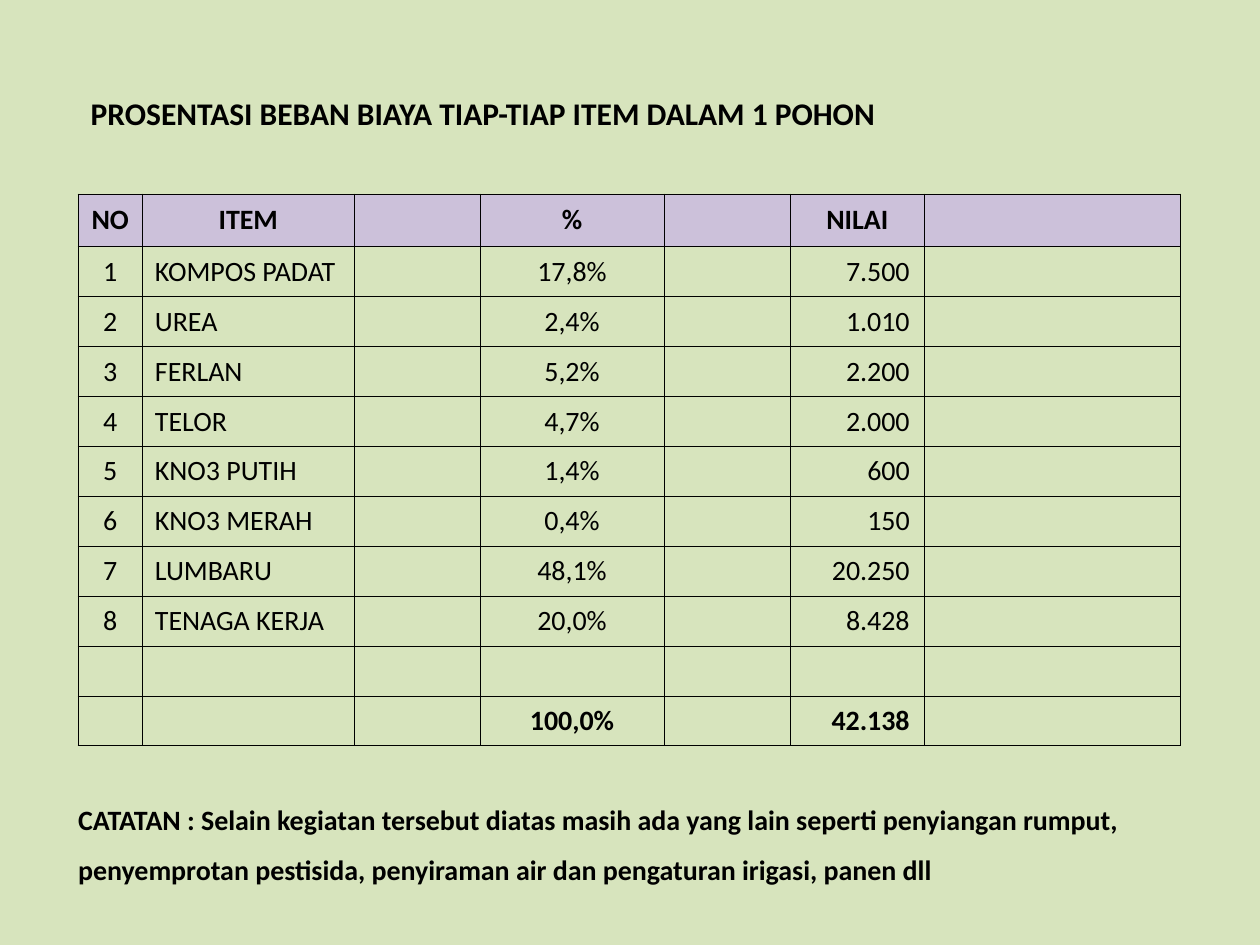
"""Build the slide with the cost share of each item per tree."""
from lxml import etree
from pptx import Presentation
from pptx import util as u
from pptx.dml.color import RGBColor
from pptx.enum import text
from pptx.oxml import ns

COLORS = {"background": "D7E4BD", "header": "CCC1DA", "ink": "000000"}
NO_STYLE = "{2D5ABB26-0587-4C30-8999-92F81FD0307C}"
COLUMN_WIDTHS = [0.51, 1.68, 1, 1.46, 1, 1.07, 2.03]
HEADING_HEIGHT = 0.42
BODY_HEIGHT = 5.15 / 13
HEADER_ROW, TOTAL_ROW, ROW_COUNT = 2, 12, 16
ITEMS = [
    ("KOMPOS PADAT", "17,8%", "7.500"),
    ("UREA", "2,4%", "1.010"),
    ("FERLAN", "5,2%", "2.200"),
    ("TELOR", "4,7%", "2.000"),
    ("KNO3 PUTIH", "1,4%", "600"),
    ("KNO3 MERAH", "0,4%", "150"),
    ("LUMBARU", "48,1%", "20.250"),
    ("TENAGA KERJA", "20,0%", "8.428"),
]
NOTES = [
    "CATATAN : Selain kegiatan tersebut diatas masih ada yang lain seperti penyiangan rumput,",
    "penyemprotan pestisida, penyiraman air dan pengaturan irigasi, panen dll",
]
LEFT, CENTER, RIGHT = text.PP_ALIGN.LEFT, text.PP_ALIGN.CENTER, text.PP_ALIGN.RIGHT


def write(cell, content, alignment=LEFT, bold=False, size=16):
    cell.text_frame.text = content
    paragraph = cell.text_frame.paragraphs[0]
    paragraph.alignment = alignment
    font = paragraph.runs[0].font
    font.name, font.size, font.bold = "Calibri", u.Pt(size), bold
    font.color.rgb = RGBColor.from_string(COLORS["ink"])


def add_borders(cell):
    properties = cell._tc.get_or_add_tcPr()
    for side in ("a:lnL", "a:lnR", "a:lnT", "a:lnB"):
        line = etree.SubElement(properties, ns.qn(side), w=str(u.Pt(0.5)))
        fill = etree.SubElement(line, ns.qn("a:solidFill"))
        etree.SubElement(fill, ns.qn("a:srgbClr"), val=COLORS["ink"])


presentation = Presentation()
presentation.slide_width, presentation.slide_height = u.Inches(10), u.Inches(7.5)
slide = presentation.slides.add_slide(presentation.slide_layouts[6])
slide.background.fill.solid()
slide.background.fill.fore_color.rgb = RGBColor.from_string(COLORS["background"])

frame = slide.shapes.add_table(
    ROW_COUNT, len(COLUMN_WIDTHS), u.Inches(0.62), u.Inches(0.7), u.Inches(8.75), u.Inches(6.41)
)
table = frame.table
table.first_row = table.horz_banding = False
table._tbl.tblPr.find(ns.qn("a:tableStyleId")).text = NO_STYLE
for column, width in zip(table.columns, COLUMN_WIDTHS):
    column.width = u.Inches(width)

for row_index, row in enumerate(table.rows):
    row.height = u.Inches(HEADING_HEIGHT if row_index <= HEADER_ROW else BODY_HEIGHT)
    for cell in row.cells:
        cell.margin_left = cell.margin_right = cell.margin_top = cell.margin_bottom = 0
        cell.vertical_anchor = text.MSO_ANCHOR.MIDDLE
        if HEADER_ROW <= row_index <= TOTAL_ROW:
            add_borders(cell)
        if row_index == HEADER_ROW:
            cell.fill.solid()
            cell.fill.fore_color.rgb = RGBColor.from_string(COLORS["header"])
        else:
            cell.fill.background()

title = table.cell(0, 0)
title.merge(table.cell(0, 5))
title.margin_left = u.Inches(0.1)
write(title, "PROSENTASI BEBAN BIAYA TIAP-TIAP ITEM DALAM 1 POHON", bold=True, size=18)

for column_index, heading in {0: "NO", 1: "ITEM", 3: "%", 5: "NILAI"}.items():
    write(table.cell(HEADER_ROW, column_index), heading, CENTER, bold=True)

for number, (item, share, value) in enumerate(ITEMS, 1):
    row_index = HEADER_ROW + number
    write(table.cell(row_index, 0), str(number), CENTER)
    write(table.cell(row_index, 1), item)
    table.cell(row_index, 1).margin_left = u.Inches(0.1)
    write(table.cell(row_index, 3), share, CENTER)
    write(table.cell(row_index, 5), value, RIGHT)
    table.cell(row_index, 5).margin_right = u.Inches(0.12)

write(table.cell(TOTAL_ROW, 3), "100,0%", CENTER, bold=True)
write(table.cell(TOTAL_ROW, 5), "42.138", RIGHT, bold=True)
table.cell(TOTAL_ROW, 5).margin_right = u.Inches(0.12)

for row_index, note in enumerate(NOTES, TOTAL_ROW + 2):
    table.cell(row_index, 0).merge(table.cell(row_index, 6))
    write(table.cell(row_index, 0), note, bold=True)

presentation.save("out.pptx")
